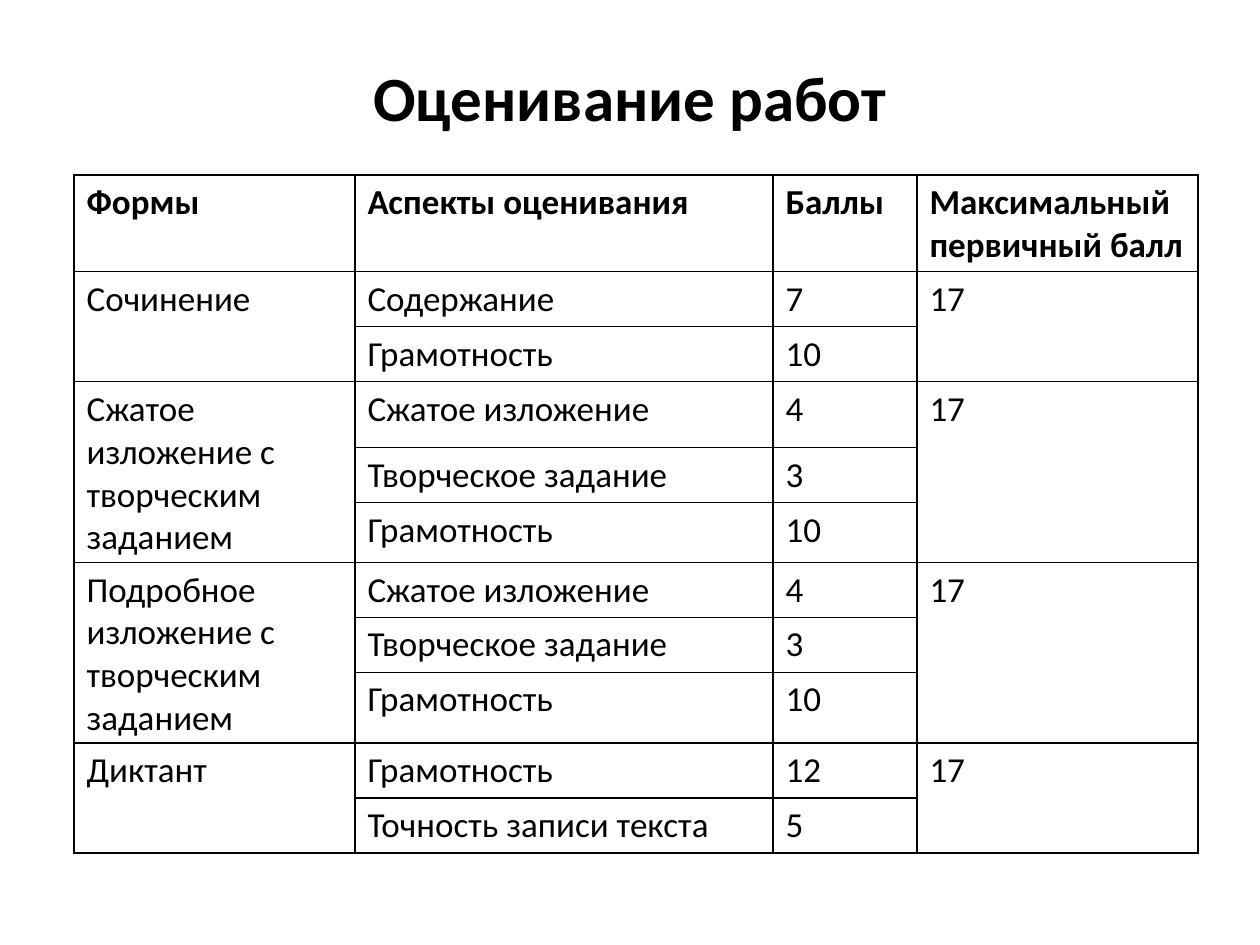
"""Build a slide with a table of marks for each form of written work."""
from dataclasses import dataclass

from lxml.etree import SubElement
from pptx import Presentation
from pptx.dml.color import RGBColor
from pptx.enum.text import MSO_ANCHOR as Anchor, PP_ALIGN as Align
from pptx.oxml.ns import qn
from pptx.util import Pt

TITLE = "Оценивание работ"
HEADER = ("Формы", "Аспекты оценивания", "Баллы", "Максимальный первичный балл")
RETELLING = (("Сжатое изложение", 4), ("Творческое задание", 3), ("Грамотность", 10))
FORMS = [
    ("Сочинение", (("Содержание", 7), ("Грамотность", 10)), 17),
    ("Сжатое изложение с творческим заданием", RETELLING, 17),
    ("Подробное изложение с творческим заданием", RETELLING, 17),
    ("Диктант", (("Грамотность", 12), ("Точность записи текста", 5)), 17),
]

PX = 914400 // 126
SLIDE = (1260, 945)
TITLE_BOX = (63, 38, 1134, 117)
TABLE_AT = (74, 175)
COLS = (281, 418, 144, 281)
HEADER_H, ROW_H, TALL_H = 95, 55, 66
TALL_ROWS = (3, 8)


@dataclass(frozen=True)
class Theme:
    font: str = "Calibri"
    ink: str = "000000"
    paper: str = "FFFFFF"
    title: int = 36
    body: int = 20
    border: int = 1


THEME = Theme()


def px(*values):
    return [v * PX for v in values]


def write(tf, text, size, bold=False, align=Align.LEFT):
    tf.word_wrap = True
    tf.text = text
    p = tf.paragraphs[0]
    p.alignment = align
    font = p.runs[0].font
    font.name, font.size, font.bold = THEME.font, Pt(size), bold
    font.color.rgb = RGBColor.from_string(THEME.ink)


def style_cell(cell):
    props = cell._tc.get_or_add_tcPr()
    for side in ("lnL", "lnR", "lnT", "lnB"):
        line = SubElement(props, qn(f"a:{side}"), w=str(Pt(THEME.border)))
        fill = SubElement(line, qn("a:solidFill"))
        SubElement(fill, qn("a:srgbClr"), val=THEME.ink)
    cell.fill.background()


def add_title(slide):
    tf = slide.shapes.add_textbox(*px(*TITLE_BOX)).text_frame
    write(tf, TITLE, THEME.title, True, Align.CENTER)
    tf.vertical_anchor = Anchor.MIDDLE


def add_marks(slide):
    count = 1 + sum(len(aspects) for _, aspects, _ in FORMS)
    heights = [HEADER_H] + [TALL_H if i in TALL_ROWS else ROW_H for i in range(1, count)]
    size = px(sum(COLS), sum(heights))
    table = slide.shapes.add_table(count, len(COLS), *px(*TABLE_AT), *size).table
    table.first_row = table.horz_banding = False
    for col, width in zip(table.columns, px(*COLS)):
        col.width = width
    for row, height in zip(table.rows, px(*heights)):
        row.height = height
    for cell in table.iter_cells():
        style_cell(cell)

    def put(row, col, value, bold=False):
        write(table.cell(row, col).text_frame, str(value), THEME.body, bold)

    for col, label in enumerate(HEADER):
        put(0, col, label, True)
    top = 1
    for form, aspects, maximum in FORMS:
        for col, value in ((0, form), (3, maximum)):
            table.cell(top, col).merge(table.cell(top + len(aspects) - 1, col))
            put(top, col, value)
        for row, (aspect, marks) in enumerate(aspects, top):
            put(row, 1, aspect)
            put(row, 2, marks)
        top += len(aspects)


def main():
    prs = Presentation()
    prs.slide_width, prs.slide_height = px(*SLIDE)
    slide = prs.slides.add_slide(prs.slide_layouts[6])
    slide.background.fill.solid()
    slide.background.fill.fore_color.rgb = RGBColor.from_string(THEME.paper)
    add_title(slide)
    add_marks(slide)
    prs.save("out.pptx")


if __name__ == "__main__":
    main()
